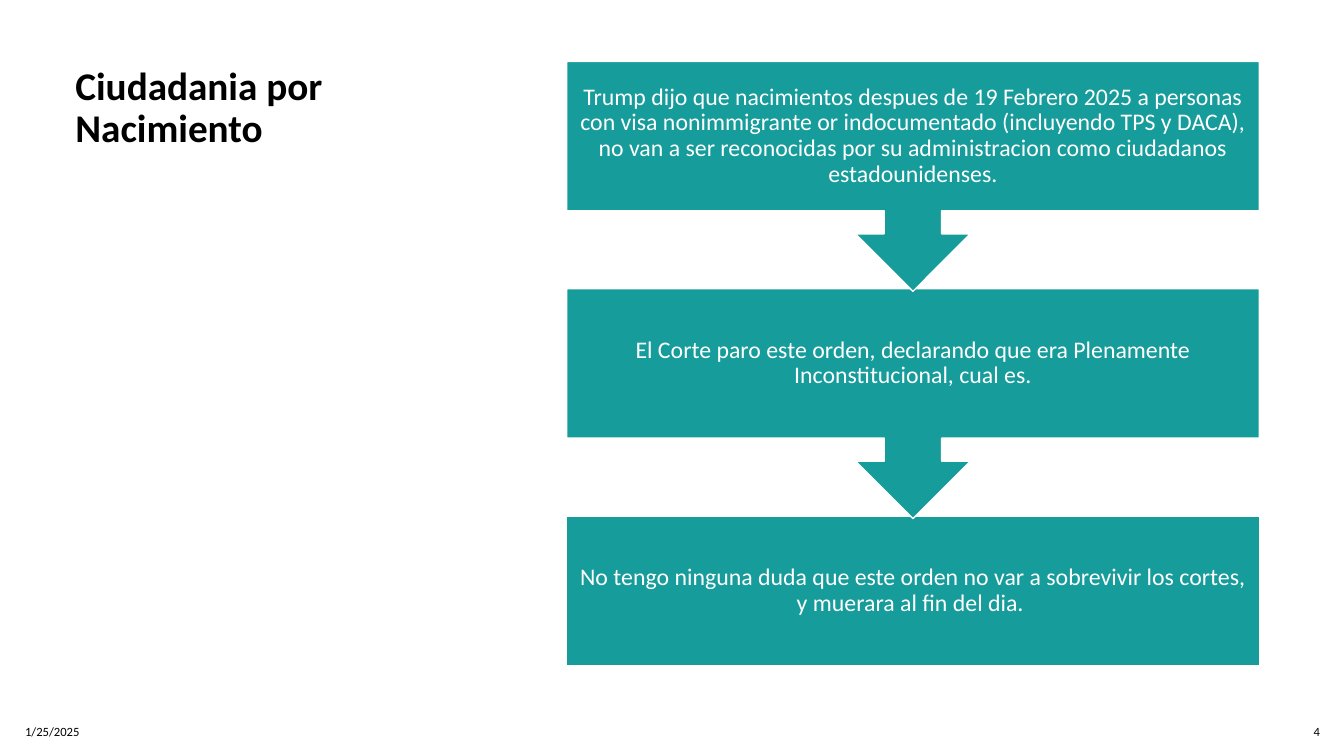
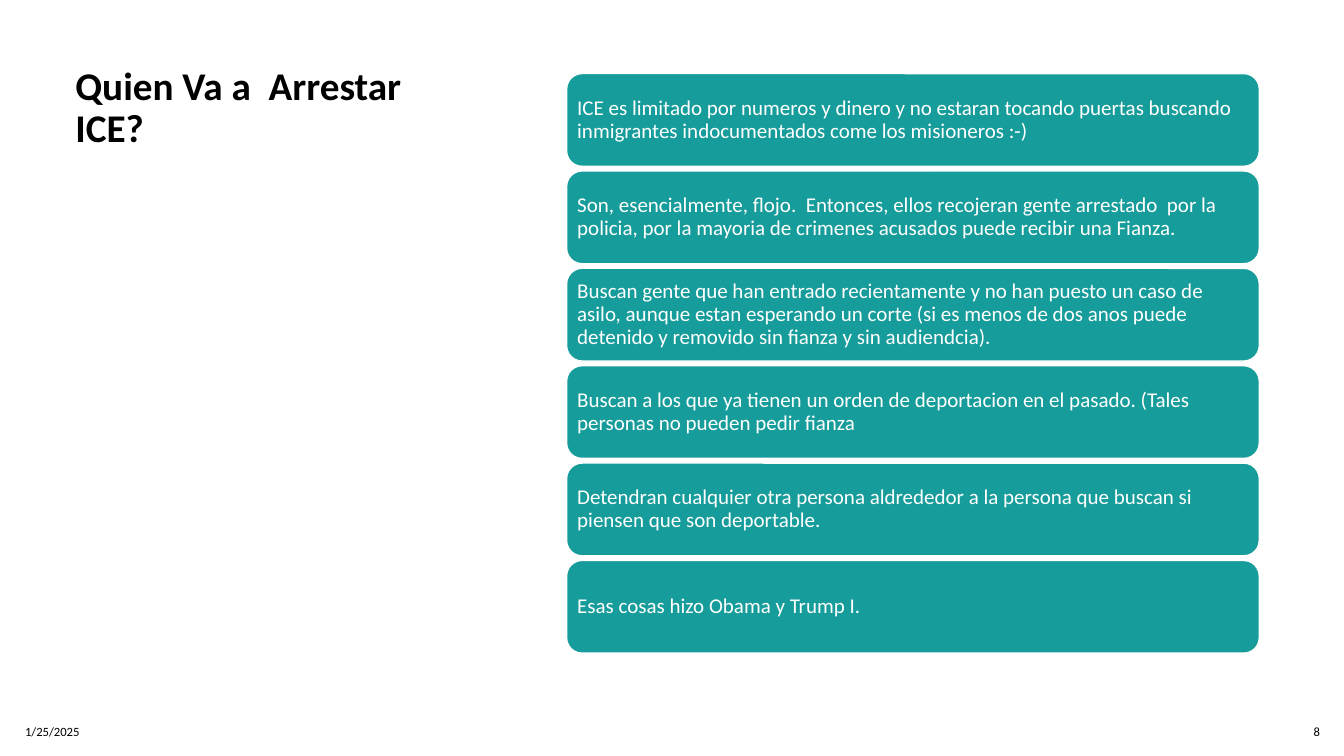
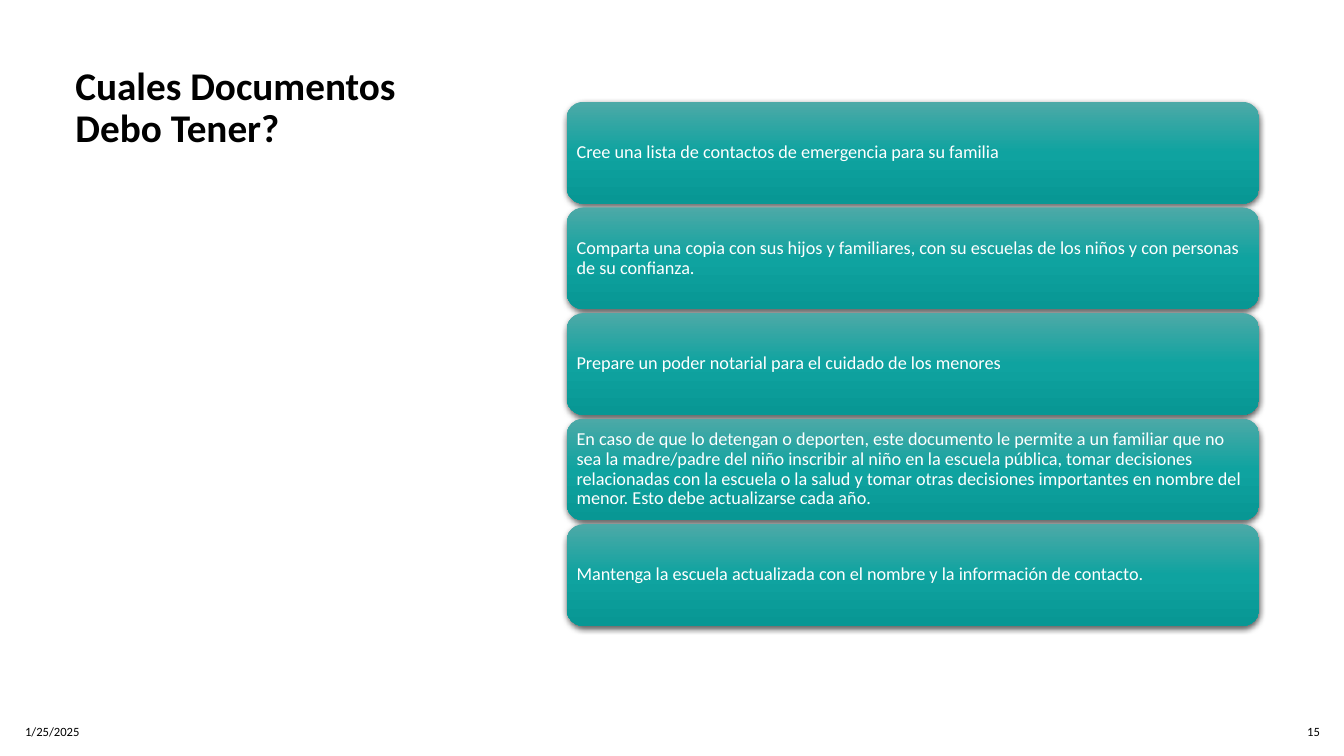
from copy import deepcopy
from dataclasses import dataclass

from lxml import etree
from pptx import Presentation
from pptx.dml.color import RGBColor
from pptx.enum.shapes import MSO_SHAPE
from pptx.enum.text import MSO_ANCHOR, PP_ALIGN
from pptx.oxml.ns import qn
from pptx.util import Inches, Pt

CALLOUT = MSO_SHAPE.DOWN_ARROW_CALLOUT
RECTANGLE = MSO_SHAPE.RECTANGLE
ROUNDED = MSO_SHAPE.ROUNDED_RECTANGLE
TOP, MIDDLE = MSO_ANCHOR.TOP, MSO_ANCHOR.MIDDLE
LEFT, CENTER, RIGHT = PP_ALIGN.LEFT, PP_ALIGN.CENTER, PP_ALIGN.RIGHT


@dataclass(frozen=True)
class Theme:
    font: str = "Calibri"
    ink: str = "000000"
    paper: str = "FFFFFF"
    teal: str = "169C9A"
    glossy: tuple = ((0, "4DA9A7"), (0.5, "0FA3A0"), (1, "089794"))
    title_size: int = 28
    step_size: int = 17
    point_size: int = 15
    document_size: int = 13
    footer_size: int = 9
    line_spacing: float = 0.9


THEME = Theme()
SLIDE_WIDTH, SLIDE_HEIGHT = 13.33, 7.5
COLUMN_LEFT, COLUMN_WIDTH = 5.62, 6.87
TITLE_AREA = (0.65, 0.61, 3.93, 1.92)
DATE_AREA = (0.15, 7.06, 3.82, 0.4)
NUMBER_AREA = (12.72, 7.06, 0.47, 0.4)
DATE = "1/25/2025"

STEPS = (
    "Trump dijo que nacimientos despues de 19 Febrero 2025 a personas con visa nonimmigrante or indocumentado (incluyendo TPS y DACA), no van a ser reconocidas por su administracion como ciudadanos estadounidenses.",
    "El Corte paro este orden, declarando que era Plenamente Inconstitucional, cual es.",
    "No tengo ninguna duda que este orden no var a sobrevivir los cortes, y muerara al fin del dia. ",
)
ARREST_POINTS = (
    "ICE es limitado por numeros y dinero y no estaran tocando puertas buscando inmigrantes indocumentados come los misioneros :-)",
    "Son, esencialmente, flojo.  Entonces, ellos recojeran gente arrestado  por la policia, por la mayoria de crimenes acusados puede recibir una Fianza.",
    "Buscan gente que han entrado recientamente y no han puesto un caso de asilo, aunque estan esperando un corte (si es menos de dos anos puede detenido y removido sin fianza y sin audiendcia).",
    "Buscan a los que ya tienen un orden de deportacion en el pasado. (Tales personas no pueden pedir fianza",
    "Detendran cualquier otra persona aldrededor a la persona que buscan si piensen que son deportable.",
    "Esas cosas hizo Obama y Trump I.",
)
DOCUMENTS = (
    "Cree una lista de contactos de emergencia para su familia",
    "Comparta una copia con sus hijos y familiares, con su escuelas de los niños y con personas de su confianza.",
    "Prepare un poder notarial para el cuidado de los menores",
    "En caso de que lo detengan o deporten, este documento le permite a un familiar que no sea la madre/padre del niño inscribir al niño en la escuela pública, tomar decisiones relacionadas con la escuela o la salud y tomar otras decisiones importantes en nombre del menor. Esto debe actualizarse cada año.",
    "Mantenga la escuela actualizada con el nombre y la información de contacto.",
)


def rgb(value):
    return RGBColor.from_string(value)


def area(left, top, width, height):
    return tuple(Inches(length) for length in (left, top, width, height))


def write(frame, text, size, color, align=LEFT, anchor=MIDDLE, bold=False, spacing=1.0):
    frame.word_wrap = True
    frame.vertical_anchor = anchor
    paragraph = frame.paragraphs[0]
    paragraph.text = text
    paragraph.alignment = align
    paragraph.line_spacing = spacing
    paragraph.font.name = THEME.font
    paragraph.font.size = Pt(size)
    paragraph.font.bold = bold
    paragraph.font.color.rgb = rgb(color)


def add_label(slide, place, text, size, **style):
    label = slide.shapes.add_textbox(*area(*place))
    write(label.text_frame, text, size, THEME.ink, **style)


def start_slide(deck, title, number):
    slide = deck.slides.add_slide(deck.slide_layouts[6])
    add_label(slide, TITLE_AREA, title, THEME.title_size, anchor=TOP,
              bold=True, spacing=THEME.line_spacing)
    add_label(slide, DATE_AREA, DATE, THEME.footer_size)
    add_label(slide, NUMBER_AREA, str(number), THEME.footer_size, align=RIGHT)
    return slide


def add_panel(slide, preset, top, height, text, size, inset, align=LEFT):
    panel = slide.shapes.add_shape(preset, *area(COLUMN_LEFT, top, COLUMN_WIDTH, height))
    panel.shadow.inherit = False
    frame = panel.text_frame
    frame.margin_left = frame.margin_right = Inches(inset)
    frame.margin_top = frame.margin_bottom = Inches(inset)
    write(frame, text, size, THEME.paper, align=align, spacing=THEME.line_spacing)
    return panel


def paint_flat(panel):
    panel.fill.solid()
    panel.fill.fore_color.rgb = rgb(THEME.teal)
    panel.line.color.rgb = rgb(THEME.paper)
    panel.line.width = Pt(1)


def paint_glossy(panel):
    panel.line.fill.background()
    panel.fill.gradient()
    panel.fill.gradient_angle = 270
    properties = panel._element.spPr
    stops = properties.find(qn("a:gradFill")).find(qn("a:gsLst"))
    stops.append(deepcopy(stops[0]))
    for stop, (position, color) in zip(panel.fill.gradient_stops, THEME.glossy):
        stop.position = position
        stop.color.rgb = rgb(color)
    shadow = etree.SubElement(
        properties.find(qn("a:effectLst")), qn("a:outerShdw"),
        blurRad=str(Pt(4.5)), dist=str(Pt(1.5)), dir="5400000",
        algn="ctr", rotWithShape="0")
    tint = etree.SubElement(shadow, qn("a:srgbClr"), val=THEME.ink)
    etree.SubElement(tint, qn("a:alpha"), val="63000")


def stack(texts, first, last):
    pitch = (last - first) / (len(texts) - 1)
    return [(first + row * pitch, text) for row, text in enumerate(texts)]


def add_flow(slide, steps, first, last, box_height, callout_height):
    *earlier, (end_top, end_text) = stack(steps, first, last)
    panels = [(RECTANGLE, end_top, box_height, end_text)]
    panels += [(CALLOUT, top, callout_height, text) for top, text in reversed(earlier)]
    for preset, top, height, text in panels:
        paint_flat(add_panel(slide, preset, top, height, text,
                             THEME.step_size, 0.13, CENTER))


def add_list(slide, texts, first, last, height, size, inset, paint):
    for top, text in stack(texts, first, last):
        paint(add_panel(slide, ROUNDED, top, height, text, size, inset))


def main():
    deck = Presentation()
    deck.slide_width, deck.slide_height = Inches(SLIDE_WIDTH), Inches(SLIDE_HEIGHT)

    citizenship = start_slide(deck, "Ciudadania por Nacimiento", 4)
    add_flow(citizenship, STEPS, 0.61, 5.12, 1.48, 2.28)

    arrests = start_slide(deck, "Quien Va a  Arrestar ICE?", 8)
    add_list(arrests, ARREST_POINTS, 0.73, 5.56, 0.92, THEME.point_size, 0.06, paint_flat)

    papers = start_slide(deck, "Cuales Documentos Debo Tener?", 15)
    add_list(papers, DOCUMENTS, 1.01, 5.2, 1.01, THEME.document_size, 0.05, paint_glossy)

    deck.save("out.pptx")


if __name__ == "__main__":
    main()
